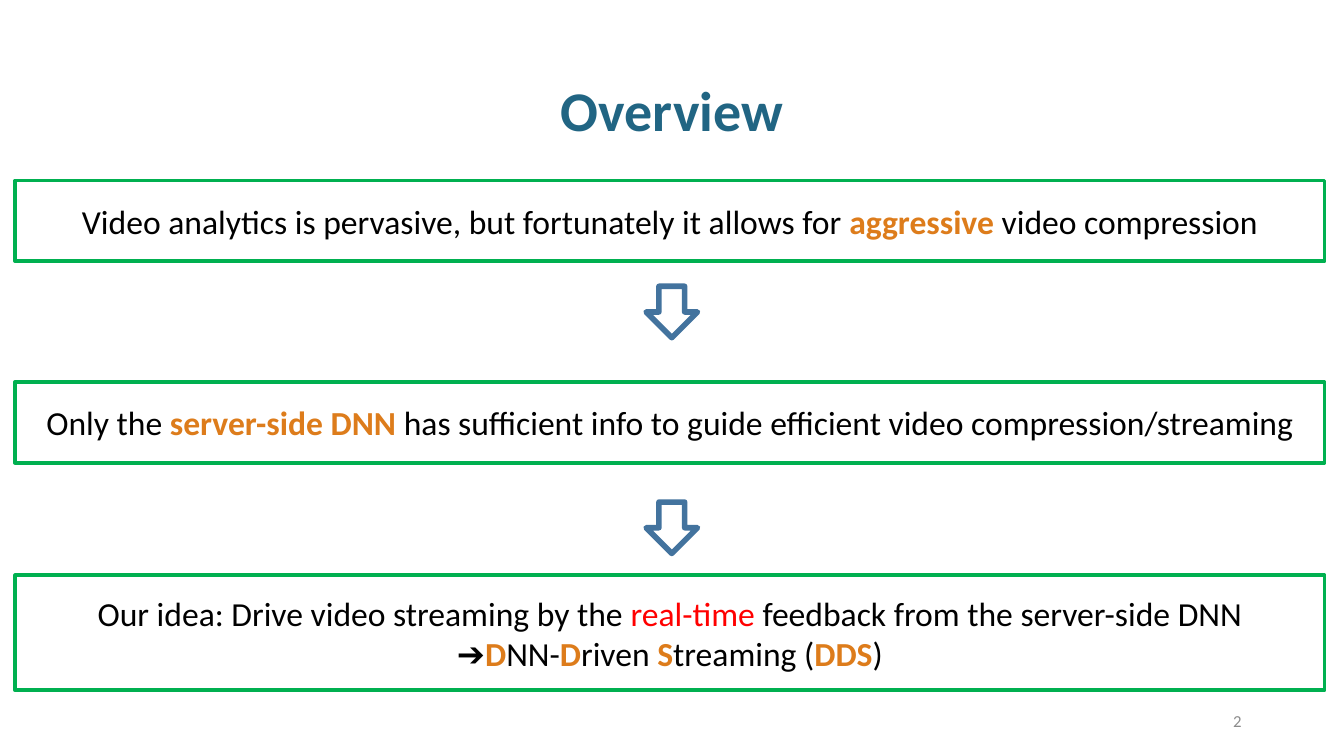
from pptx import Presentation
from pptx.dml.color import RGBColor
from pptx.enum.shapes import MSO_SHAPE
from pptx.enum.text import MSO_ANCHOR, PP_ALIGN
from pptx.util import Pt

COLORS = {
    "title": "216583", "number": "8C8C8C", "body": "000000", "key": "DD7C1B",
    "alert": "FF0000", "box": "FFFFFF", "border": "00B050", "arrow": "43739E",
}


def rgb(name):
    return RGBColor.from_string(COLORS[name])


class SlideBuilder:
    font = "Calibri"
    bold_colors = ("title", "key")

    def __init__(self, slide):
        self.s = slide

    def fill_text(self, sp, paragraphs, size, align=PP_ALIGN.CENTER,
                  spacing=1.0):
        """Each paragraph is a list of (text, colour name) runs."""
        tf = sp.text_frame
        tf.word_wrap = True
        tf.vertical_anchor = MSO_ANCHOR.MIDDLE
        for i, runs in enumerate(paragraphs):
            p = tf.add_paragraph() if i else tf.paragraphs[0]
            p.alignment = align
            p.line_spacing = spacing
            for text, color in runs:
                r = p.add_run()
                r.text = text
                fmt = {"name": self.font, "size": Pt(size),
                       "bold": color in self.bold_colors}
                for key, value in fmt.items():
                    setattr(r.font, key, value)
                r.font.color.rgb = rgb(color)

    def text(self, x, y, w, h, paragraphs, size, **layout):
        sp = self.s.shapes.add_textbox(Pt(x), Pt(y), Pt(w), Pt(h))
        self.fill_text(sp, paragraphs, size, **layout)

    def shape(self, kind, x, y, w, h, line, width):
        sp = self.s.shapes.add_shape(kind, Pt(x), Pt(y), Pt(w), Pt(h))
        sp.shadow.inherit = False
        sp.line.color.rgb = rgb(line)
        sp.line.width = Pt(width)
        return sp

    def box(self, y, h, paragraphs):
        sp = self.shape(MSO_SHAPE.RECTANGLE, 10.8, y, 935.3, h, "border", 2.75)
        sp.fill.solid()
        sp.fill.fore_color.rgb = rgb("box")
        self.fill_text(sp, paragraphs, 24)

    def arrow(self, y):
        sp = self.shape(MSO_SHAPE.DOWN_ARROW, 461.5, y, 36.7, 36.7, "arrow", 4)
        sp.fill.background()


def main():
    prs = Presentation()
    prs.slide_width, prs.slide_height = Pt(960), Pt(540)
    b = SlideBuilder(prs.slides.add_slide(prs.slide_layouts[6]))

    # Title and slide number
    b.text(66, 28.8, 828, 104.4, [[("Overview", "title")]], 40, spacing=0.9)
    b.text(678, 500.5, 216, 28.8, [[("2", "number")]], 12,
           align=PP_ALIGN.RIGHT)

    # Three steps of the argument
    b.box(129, 57.6, [[
        ("Video analytics is pervasive, but fortunately it allows for ", "body"),
        ("aggressive", "key"), (" video compression", "body")]])
    b.box(273, 57.6, [[
        ("Only the ", "body"), ("server-side DNN ", "key"),
        ("has sufficient info to guide efficient video "
         "compression/streaming", "body")]])
    b.box(411, 82.1, [
        [("Our idea: Drive video streaming by the ", "body"),
         ("real-time", "alert"),
         (" feedback from the server-side DNN", "body")],
        [("➔", "body"), ("D", "key"), ("NN-", "body"), ("D", "key"),
         ("riven ", "body"), ("S", "key"), ("treaming (", "body"),
         ("DDS", "key"), (")", "body")]])

    # Arrows between the steps
    for y in (204.5, 358.6):
        b.arrow(y)

    prs.save("out.pptx")


if __name__ == "__main__":
    main()
